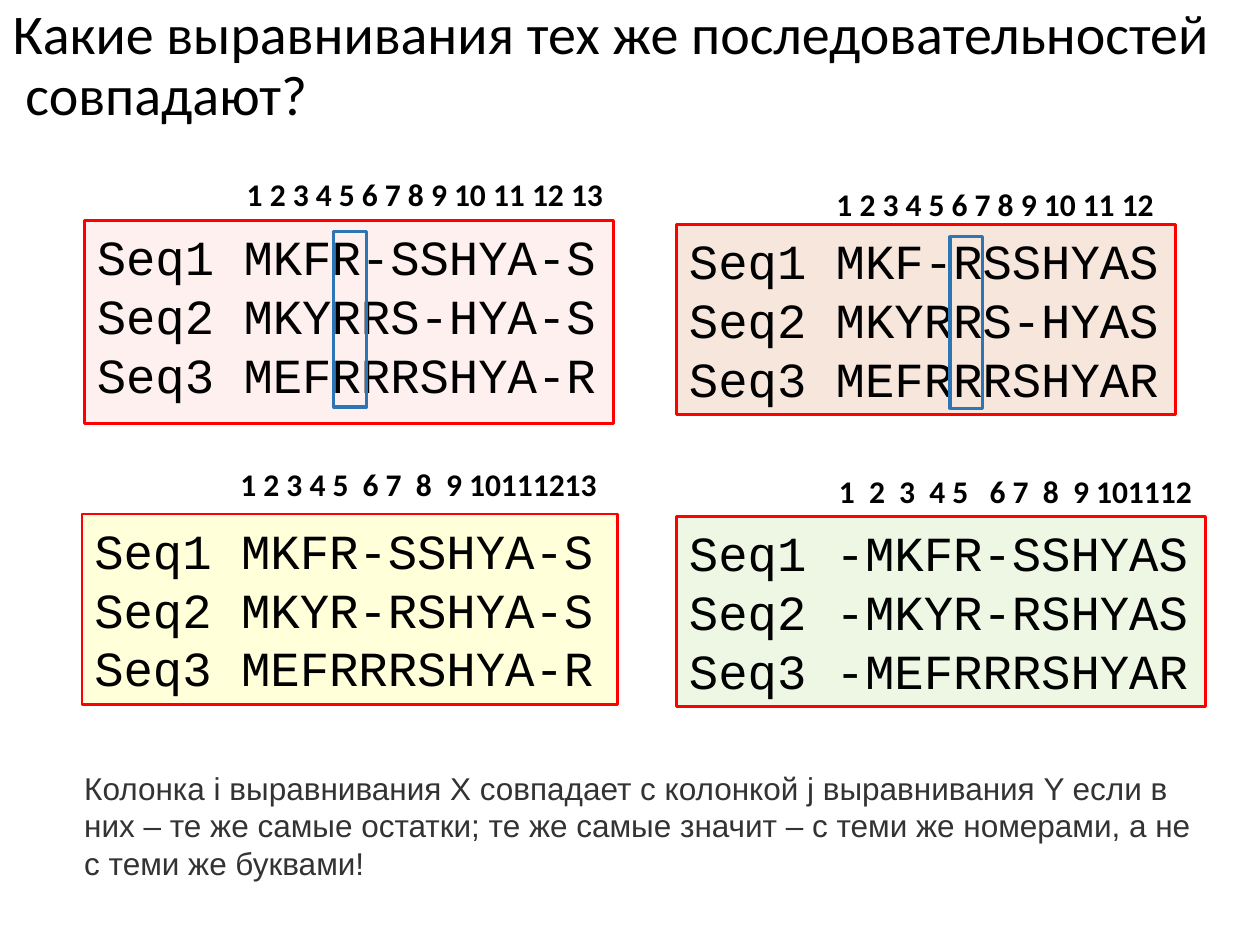
from dataclasses import dataclass

import pptx
import pptx.dml.color
import pptx.enum.shapes
import pptx.enum.text
import pptx.oxml
import pptx.oxml.ns
import pptx.util
from pptx.util import Inches


@dataclass(frozen=True)
class Theme:
    text: str = "000000"
    note: str = "333333"
    border: str = "FF0000"
    marker: str = "2E75B6"
    heading_font: str = "Calibri"
    sequence_font: str = "Courier New"
    note_font: str = "Arial"
    title_size: int = 32
    sequence_size: int = 28
    small_size: int = 18


THEME = Theme()

# Box (left, top, width, height), fill, opacity in percent, wrapping, rows,
# then the column numbers and their box.
ALIGNMENTS = [
    ((0.65, 4.08, 4.25, 1.51), "FFFF00", 15, True,
     ["MKFR-SSHYA-S", "MKYR-RSHYA-S", "MEFRRRSHYA-R"],
     "1 2 3 4 5  6 7  8  9 10111213", (1.81, 3.64, 3.07, 0.4)),
    ((5.37, 4.1, 4.2, 1.51), "92D050", 15, False,
     ["-MKFR-SSHYAS", "-MKYR-RSHYAS", "-MEFRRRSHYAR"],
     "1  2  3  4 5   6 7  8  9 101112", (6.56, 3.7, 3.11, 0.4)),
    ((0.67, 1.75, 4.2, 1.61), "FF0000", 6, True,
     ["MKFR-SSHYA-S", "MKYRRS-HYA-S", "MEFRRRSHYA-R"],
     "1 2 3 4 5 6 7 8 9 10 11 12 13", (1.86, 1.34, 3.07, 0.4)),
    ((5.37, 1.78, 3.96, 1.51), "C55A11", 15, False,
     ["MKF-RSSHYAS", "MKYRRS-HYAS", "MEFRRRSHYAR"],
     "1 2 3 4 5 6 7 8 9 10 11 12", (6.54, 1.42, 2.82, 0.4)),
]
MARKERS = [(2.65, 1.84, 0.26, 1.39), (7.54, 1.88, 0.26, 1.36)]
NOTE = (
    "Колонка i выравнивания X совпадает c колонкой j выравнивания Y если в "
    "них – те же самые остатки; те же самые значит – с теми же номерами, "
    "а не с теми же буквами!"
)


def rgb(value):
    return pptx.dml.color.RGBColor.from_string(value)


def style_paragraph(paragraph, font_name, size, color=THEME.text, bold=False):
    paragraph.font.name = font_name
    paragraph.font.size = pptx.util.Pt(size)
    paragraph.font.color.rgb = rgb(color)
    paragraph.font.bold = bold


def set_outline(shape, color, width):
    shape.line.color.rgb = rgb(color)
    shape.line.width = pptx.util.Pt(width)


def set_translucent_fill(shape, color, opacity):
    shape.fill.solid()
    shape.fill.fore_color.rgb = rgb(color)
    color_element = shape.fill._xPr.find(".//" + pptx.oxml.ns.qn("a:srgbClr"))
    alpha = pptx.oxml.parse_xml(
        f'<a:alpha {pptx.oxml.ns.nsdecls("a")} val="{opacity * 1000}"/>')
    color_element.append(alpha)


def add_text(slide, box, lines, wrap, **style):
    shape = slide.shapes.add_textbox(*map(Inches, box))
    frame = shape.text_frame
    frame.text = "\n".join(lines)
    frame.word_wrap = wrap
    frame.auto_size = pptx.enum.text.MSO_AUTO_SIZE.SHAPE_TO_FIT_TEXT
    for paragraph in frame.paragraphs:
        style_paragraph(paragraph, **style)
    return shape


def add_alignment(slide, box, fill, opacity, wrap, rows, numbers, numbers_box):
    """Add a framed block of sequences with its column numbers above."""
    lines = [f"Seq{index} {row}" for index, row in enumerate(rows, 1)]
    block = add_text(slide, box, lines, wrap,
                     font_name=THEME.sequence_font, size=THEME.sequence_size)
    set_translucent_fill(block, fill, opacity)
    set_outline(block, THEME.border, 1.5)
    add_text(slide, numbers_box, [numbers], False,
             font_name=THEME.heading_font, size=THEME.small_size, bold=True)


def add_column_marker(slide, box):
    marker = slide.shapes.add_shape(
        pptx.enum.shapes.MSO_SHAPE.RECTANGLE, *map(Inches, box))
    marker.shadow.inherit = False
    marker.fill.background()
    set_outline(marker, THEME.marker, 1.75)


def set_title(slide):
    title = slide.shapes.title
    title.left, title.top = Inches(0), Inches(-0.1)
    title.width, title.height = Inches(9.74), Inches(1.26)
    frame = title.text_frame
    frame.word_wrap = True
    frame.auto_size = pptx.enum.text.MSO_AUTO_SIZE.NONE
    frame.vertical_anchor = pptx.enum.text.MSO_ANCHOR.MIDDLE
    paragraph = frame.paragraphs[0]
    paragraph.add_run().text = "Какие выравнивания тех же последовательностей"
    paragraph.add_line_break()
    paragraph.add_run().text = " совпадают?"
    paragraph.alignment = pptx.enum.text.PP_ALIGN.LEFT
    paragraph.line_spacing = 0.9
    style_paragraph(paragraph, THEME.heading_font, THEME.title_size)


def main():
    presentation = pptx.Presentation()
    presentation.slide_width = Inches(10)
    presentation.slide_height = Inches(7.5)
    slide = presentation.slides.add_slide(presentation.slide_layouts[5])
    set_title(slide)
    for alignment in ALIGNMENTS:
        add_alignment(slide, *alignment)
    for box in MARKERS:
        add_column_marker(slide, box)
    add_text(slide, (0.57, 6.05, 9.09, 1.01), [NOTE], True,
             font_name=THEME.note_font, size=THEME.small_size,
             color=THEME.note)
    presentation.save("out.pptx")


if __name__ == "__main__":
    main()
